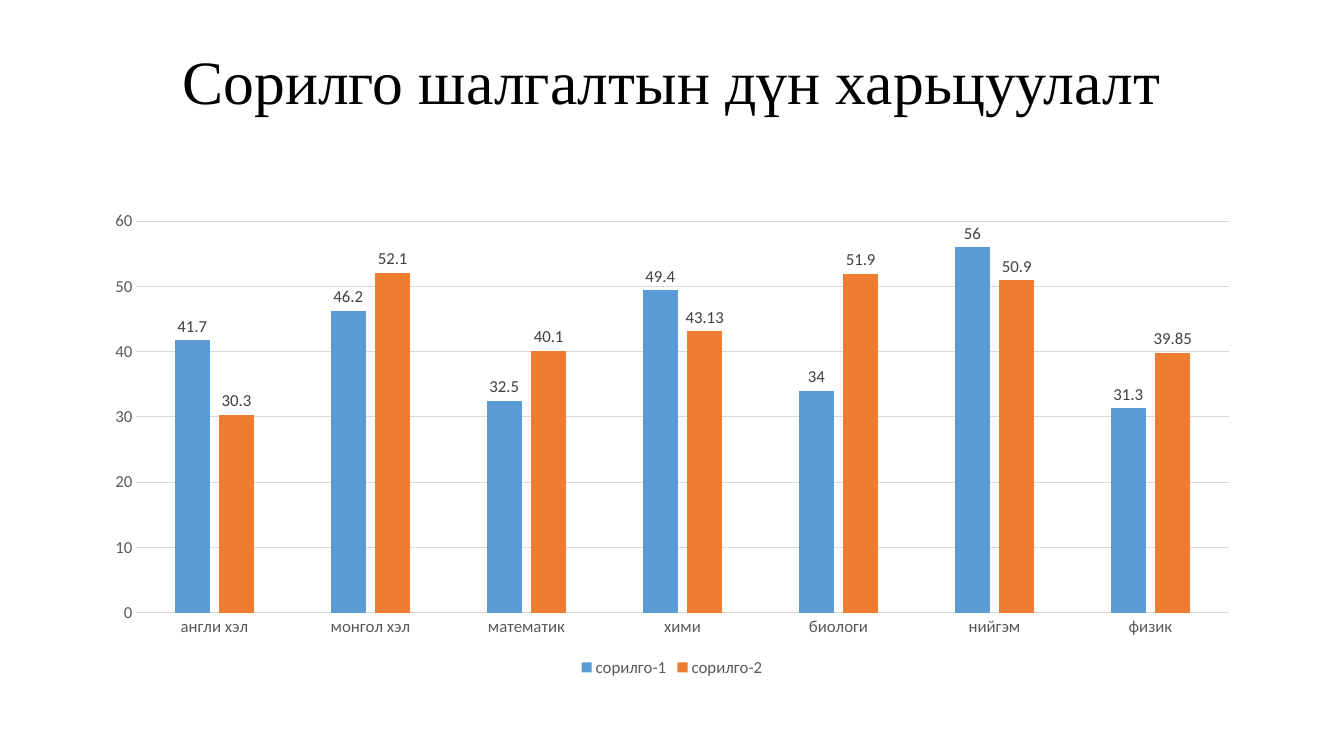
from pptx import Presentation
from pptx.chart.data import CategoryChartData
from pptx.dml.color import RGBColor
from pptx.enum.chart import XL_CHART_TYPE as ChartType, XL_LABEL_POSITION as LabelPosition
from pptx.enum.chart import XL_LEGEND_POSITION as LegendPosition, XL_TICK_MARK as TickMark
from pptx.enum.text import MSO_ANCHOR as Anchor, PP_ALIGN as Align
from pptx.util import Inches, Pt

TITLE = "Сорилго шалгалтын дүн харьцуулалт"
SUBJECTS = ["англи хэл", "монгол хэл", "математик", "хими", "биологи", "нийгэм", "физик"]
BLUE = RGBColor(0x5B, 0x9B, 0xD5)
ORANGE = RGBColor(0xED, 0x7D, 0x31)
BLACK = RGBColor(0, 0, 0)
DARK_GRAY = RGBColor(0x40, 0x40, 0x40)
GRAY = RGBColor(0x59, 0x59, 0x59)
LIGHT_GRAY = RGBColor(0xD9, 0xD9, 0xD9)
TESTS = [
    ("сорилго-1", BLUE, [41.7, 46.2, 32.5, 49.4, 34, 56, 31.3]),
    ("сорилго-2", ORANGE, [30.3, 52.1, 40.1, 43.13, 51.9, 50.9, 39.85]),
]

WIDTH, HEIGHT = Inches(13.33), Inches(7.5)
CONTENT_WIDTH = Inches(11.5)
LEFT = (WIDTH - CONTENT_WIDTH) // 2
TITLE_TOP, TITLE_HEIGHT = Inches(0.4), Inches(0.87)
CHART_TOP, CHART_HEIGHT = Inches(2), Inches(4.76)


def style_font(font, size=12, color=GRAY, name="Calibri"):
    font.size = Pt(size)
    font.name = name
    font.bold = False
    font.color.rgb = color


def style_line(line):
    line.color.rgb = LIGHT_GRAY
    line.width = Pt(0.75)


def add_title(page, text, **font_format):
    box = page.shapes.add_textbox(LEFT, TITLE_TOP, CONTENT_WIDTH, TITLE_HEIGHT)
    frame = box.text_frame
    frame.word_wrap = True
    frame.vertical_anchor = Anchor.MIDDLE
    para = frame.paragraphs[0]
    para.alignment = Align.CENTER
    para.line_spacing = 0.9
    span = para.add_run()
    span.text = text
    style_font(span.font, **font_format)


def add_results_chart(page):
    results = CategoryChartData()
    results.categories = SUBJECTS
    for name, _, scores in TESTS:
        results.add_series(name, scores)
    chart = page.shapes.add_chart(
        ChartType.COLUMN_CLUSTERED, LEFT, CHART_TOP, CONTENT_WIDTH, CHART_HEIGHT, results
    ).chart
    style_font(chart.font, size=10, color=BLACK)
    chart.has_title = False
    chart.has_legend = True
    chart.legend.position = LegendPosition.BOTTOM
    chart.legend.include_in_layout = False
    style_font(chart.legend.font)

    for axis in (chart.category_axis, chart.value_axis):
        axis.major_tick_mark = axis.minor_tick_mark = TickMark.NONE
        style_font(axis.tick_labels.font)
    style_line(chart.category_axis.format.line)
    scale = chart.value_axis
    scale.minimum_scale, scale.maximum_scale, scale.major_unit = 0, 60, 10
    scale.format.line.fill.background()
    scale.has_major_gridlines = True
    style_line(scale.major_gridlines.format.line)

    plot = chart.plots[0]
    plot.gap_width, plot.overlap = 219, -27
    plot.vary_by_categories = False
    for series, (_, color, _) in zip(plot.series, TESTS):
        series.format.fill.solid()
        series.format.fill.fore_color.rgb = color
        series.invert_if_negative = False
        labels = series.data_labels
        labels.show_value = True
        labels.position = LabelPosition.OUTSIDE_END
        style_font(labels.font, color=DARK_GRAY)


def main():
    deck = Presentation()
    deck.slide_width, deck.slide_height = WIDTH, HEIGHT
    page = deck.slides.add_slide(deck.slide_layouts[6])
    add_title(page, TITLE, size=44, color=BLACK, name="Times New Roman")
    add_results_chart(page)
    deck.save("out.pptx")


if __name__ == "__main__":
    main()
